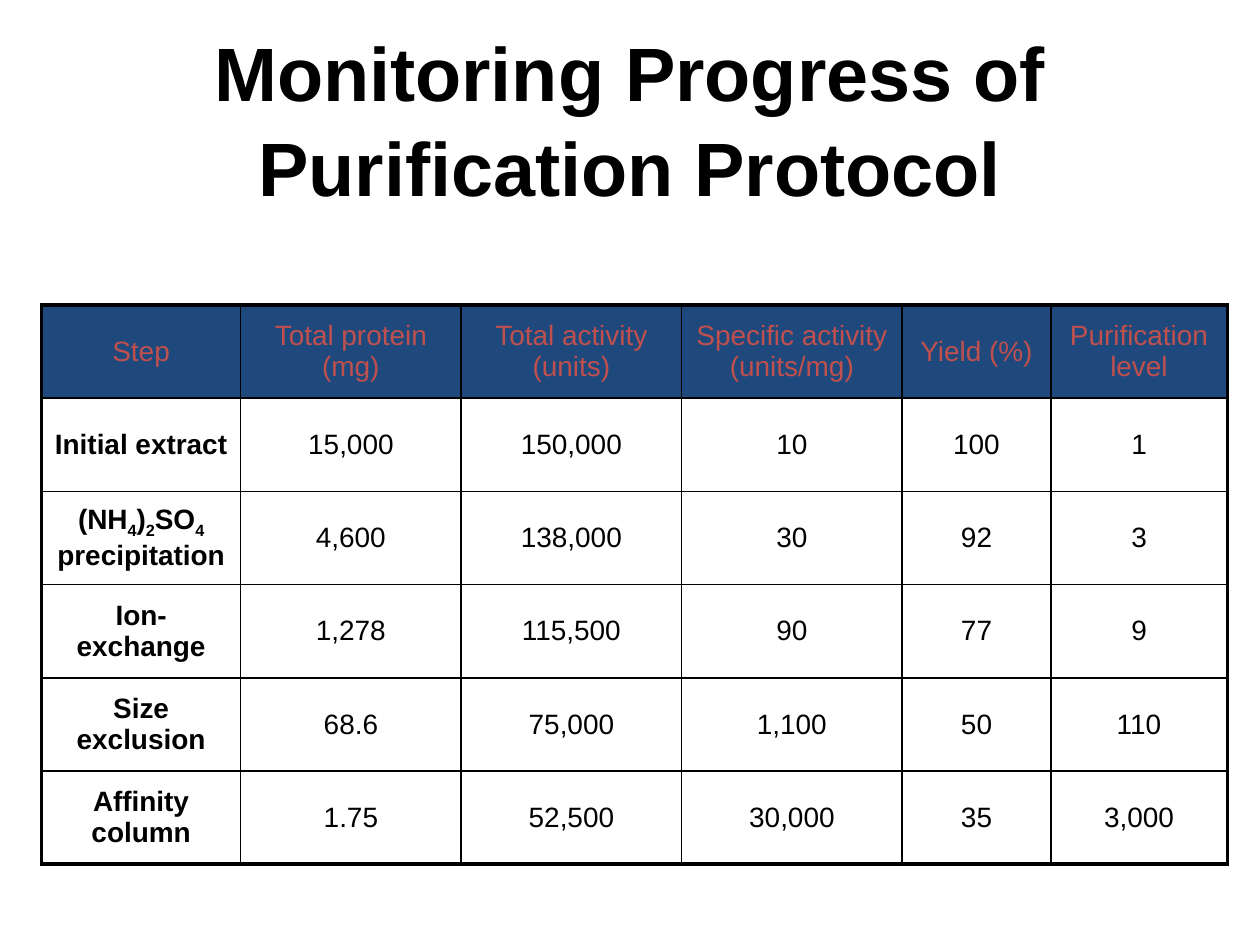
from lxml.etree import SubElement
from pptx import Presentation
from pptx.dml.color import RGBColor
from pptx.enum.text import MSO_ANCHOR, PP_ALIGN
from pptx.oxml.ns import qn
from pptx.util import Inches, Pt

COLORS = {"ink": "000000", "header_fill": "1F497D", "header_text": "C0504D"}
FONT = "Arial"
THIN, THICK = 1, 2.25

COLUMN_WIDTHS = [1.58, 1.75, 1.75, 1.75, 1.18, 1.4]
ROW_HEIGHT = 0.74
# Text between tildes is set as subscript.
PURIFICATION = [
    ["Step", "Total protein (mg)", "Total activity (units)",
     "Specific activity (units/mg)", "Yield (%)", "Purification level"],
    ["Initial extract", "15,000", "150,000", "10", "100", "1"],
    ["(NH~4~)~2~SO~4~ precipitation", "4,600", "138,000", "30", "92", "3"],
    ["Ion-exchange", "1,278", "115,500", "90", "77", "9"],
    ["Size exclusion", "68.6", "75,000", "1,100", "50", "110"],
    ["Affinity column", "1.75", "52,500", "30,000", "35", "3,000"],
]


def write_text(frame, text, size, color="ink", bold=False, line_spacing=None):
    """Write one centred paragraph, with ~text~ as subscript."""
    para = frame.paragraphs[0]
    para.alignment = PP_ALIGN.CENTER
    para.line_spacing = line_spacing
    for index, part in enumerate(text.split("~")):
        span = para.add_run()
        span.text = part
        span.font.name = FONT
        span.font.size = Pt(size)
        span.font.bold = bold
        span.font.color.rgb = RGBColor.from_string(COLORS[color])
        if index % 2:
            span.font._element.set("baseline", "-25000")


def set_borders(cell, widths):
    """Draw the left, right, top and bottom borders, in that order."""
    properties = cell._tc.get_or_add_tcPr()
    for position, (side, width) in enumerate(zip("LRTB", widths)):
        line = properties.makeelement(qn(f"a:ln{side}"), {"w": str(Pt(width))})
        fill = SubElement(line, qn("a:solidFill"))
        SubElement(fill, qn("a:srgbClr"), val=COLORS["ink"])
        properties.insert(position, line)


def add_title(page, left, top, width, height):
    box = page.shapes.add_textbox(
        Inches(left), Inches(top), Inches(width), Inches(height))
    frame = box.text_frame
    frame.word_wrap = True
    frame.vertical_anchor = MSO_ANCHOR.MIDDLE
    write_text(frame, "Monitoring Progress of Purification Protocol",
               size=43.2, bold=True, line_spacing=1.05)


def add_purification_table(page, left, top):
    rows, columns = len(PURIFICATION), len(COLUMN_WIDTHS)
    table = page.shapes.add_table(
        rows, columns, Inches(left), Inches(top),
        Inches(sum(COLUMN_WIDTHS)), Inches(rows * ROW_HEIGHT)).table
    table.first_row = table.horz_banding = False
    for column, width in zip(table.columns, COLUMN_WIDTHS):
        column.width = Inches(width)
    for r, values in enumerate(PURIFICATION):
        table.rows[r].height = Inches(ROW_HEIGHT)
        for c, text in enumerate(values):
            cell = table.cell(r, c)
            cell.vertical_anchor = MSO_ANCHOR.MIDDLE
            is_header = r == 0
            if is_header:
                cell.fill.solid()
                cell.fill.fore_color.rgb = RGBColor.from_string(
                    COLORS["header_fill"])
            else:
                cell.fill.background()
            write_text(cell.text_frame, text, size=16,
                       color="header_text" if is_header else "ink",
                       bold=c == 0 and not is_header)
            on_edge = (c == 0, c == columns - 1, r == 0, r == rows - 1)
            set_borders(cell, [THICK if edge else THIN for edge in on_edge])


def main():
    deck = Presentation()
    deck.slide_width, deck.slide_height = Inches(10), Inches(7.5)
    page = deck.slides.add_slide(deck.slide_layouts[6])
    add_title(page, 0.5, 0.3, 9, 1.25)
    add_purification_table(page, 0.33, 2.42)
    deck.save("out.pptx")


if __name__ == "__main__":
    main()
